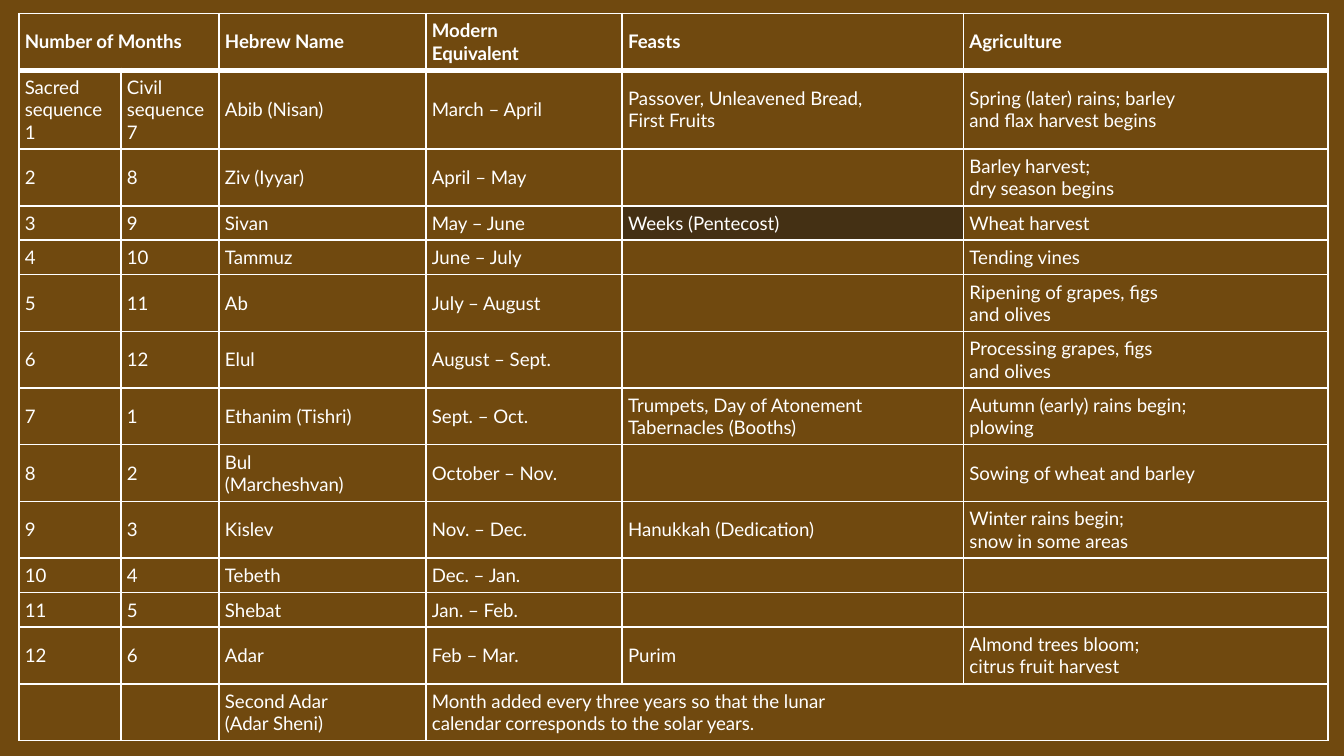
from lxml.etree import SubElement
from pptx import Presentation
from pptx.dml.color import RGBColor
from pptx.enum.text import MSO_ANCHOR
from pptx.oxml.ns import qn
from pptx.util import Inches, Pt

COLORS = {"background": "70490F", "text": "FFFFFF", "border": "FFFFFF", "highlight": "191919"}
FONT = "Lato"
TEXT_SIZE = 10
THIN, THICK = 1, 3
CELL_MARGIN = Pt(3.2)

# Minimum row heights; rows grow to hold their text
COLUMN_WIDTHS = [0.76, 0.73, 1.54, 1.46, 2.54, 2.71]
ROW_HEIGHTS = [0.28, 0.48, 0.28, 0.18, 0.18, 0.28, 0.28,
               0.38, 0.28, 0.28, 0.18, 0.18, 0.28, 0.28]

# "\n" starts a paragraph, "\v" breaks a line
MONTHS = [
    ["Number of Months", "", "Hebrew Name", "Modern \vEquivalent", "Feasts", "Agriculture"],
    ["Sacred\vsequence\n1", "Civil\vsequence\n7", "Abib (Nisan)", "March – April",
     "Passover, Unleavened Bread, \vFirst Fruits",
     "Spring (later) rains; barley \vand flax harvest begins"],
    ["2", "8", "Ziv (Iyyar)", "April – May", "", "Barley harvest; \vdry season begins"],
    ["3", "9", "Sivan", "May – June", "Weeks (Pentecost)", "Wheat harvest"],
    ["4", "10", "Tammuz", "June – July", "", "Tending vines"],
    ["5", "11", "Ab", "July – August", "", "Ripening of grapes, figs \vand olives"],
    ["6", "12", "Elul", "August – Sept.", "", "Processing grapes, figs\vand olives"],
    ["7", "1", "Ethanim (Tishri)", "Sept. – Oct.",
     "Trumpets, Day of Atonement\nTabernacles (Booths)",
     "Autumn (early) rains begin;\nplowing"],
    ["8", "2", "Bul \v(Marcheshvan)", "October – Nov.", "", "Sowing of wheat and barley"],
    ["9", "3", "Kislev", "Nov. – Dec.", "Hanukkah (Dedication)",
     "Winter rains begin; \vsnow in some areas"],
    ["10", "4", "Tebeth", "Dec. – Jan.", "", ""],
    ["11", "5", "Shebat", "Jan. – Feb.", "", ""],
    ["12", "6", "Adar", "Feb – Mar.", "Purim", "Almond trees bloom; \vcitrus fruit harvest"],
    ["", "", "Second Adar\v(Adar Sheni)",
     "Month added every three years so that the lunar\vcalendar corresponds to the solar years.",
     "", ""],
]
HIGHLIGHTED = (3, 4)


def rgb(name):
    return RGBColor.from_string(COLORS[name])


def write_text(frame, text, size=TEXT_SIZE, bold=False, color="text"):
    frame.text = text
    for para in frame.paragraphs:
        for span in para.runs:
            span.font.name = FONT
            span.font.size = Pt(size)
            span.font.bold = bold
            span.font.color.rgb = rgb(color)
        # Line breaks and empty paragraphs carry their own text size
        for line_break in para._p.findall(qn("a:br")):
            SubElement(line_break, qn("a:rPr"), sz=str(size * 100))
        if not para.runs:
            SubElement(para._p, qn("a:endParaRPr"), sz=str(size * 100))


def set_borders(cell, **widths):
    properties = cell._tc.get_or_add_tcPr()
    for side in ("L", "R", "T", "B"):
        line = SubElement(properties, qn(f"a:ln{side}"), w=str(Pt(widths.get(side, THIN))))
        fill = SubElement(line, qn("a:solidFill"))
        SubElement(fill, qn("a:srgbClr"), val=COLORS["border"])


def fill_cell(cell, highlighted):
    if not highlighted:
        cell.fill.background()
        return
    cell.fill.solid()
    cell.fill.fore_color.rgb = rgb("highlight")
    color = cell._tc.tcPr.find(f"{qn('a:solidFill')}/{qn('a:srgbClr')}")
    SubElement(color, qn("a:alpha"), val="50000")


def add_calendar(slide, left, top, height):
    frame = slide.shapes.add_table(
        len(ROW_HEIGHTS), len(COLUMN_WIDTHS), Inches(left), Inches(top),
        Inches(sum(COLUMN_WIDTHS)), Inches(height))
    table = frame.table
    table.first_row = table.horz_banding = False
    for column, width in zip(table.columns, COLUMN_WIDTHS):
        column.width = Inches(width)

    for r, (row, row_height) in enumerate(zip(table.rows, ROW_HEIGHTS)):
        row.height = Inches(row_height)
        for c, cell in enumerate(row.cells):
            cell.vertical_anchor = MSO_ANCHOR.MIDDLE
            cell.margin_left = cell.margin_right = CELL_MARGIN
            cell.margin_top = cell.margin_bottom = CELL_MARGIN
            write_text(cell.text_frame, MONTHS[r][c], bold=r == 0)
            # A thick rule separates the header from the months
            set_borders(cell, T=THICK if r == 1 else THIN, B=THICK if r == 0 else THIN)
            fill_cell(cell, (r, c) == HIGHLIGHTED)
    frame.height = Inches(height)

    # Merged header and closing note
    table.cell(0, 0).merge(table.cell(0, 1))
    last = len(ROW_HEIGHTS) - 1
    table.cell(last, 3).merge(table.cell(last, 5))


def main():
    deck = Presentation()
    deck.slide_width = Inches(10)
    deck.slide_height = deck.slide_width * 9 // 16
    page = deck.slides.add_slide(deck.slide_layouts[6])
    page.background.fill.solid()
    page.background.fill.fore_color.rgb = rgb("background")
    add_calendar(page, left=0.14, top=0.1, height=5.42)
    deck.save("out.pptx")


if __name__ == "__main__":
    main()
